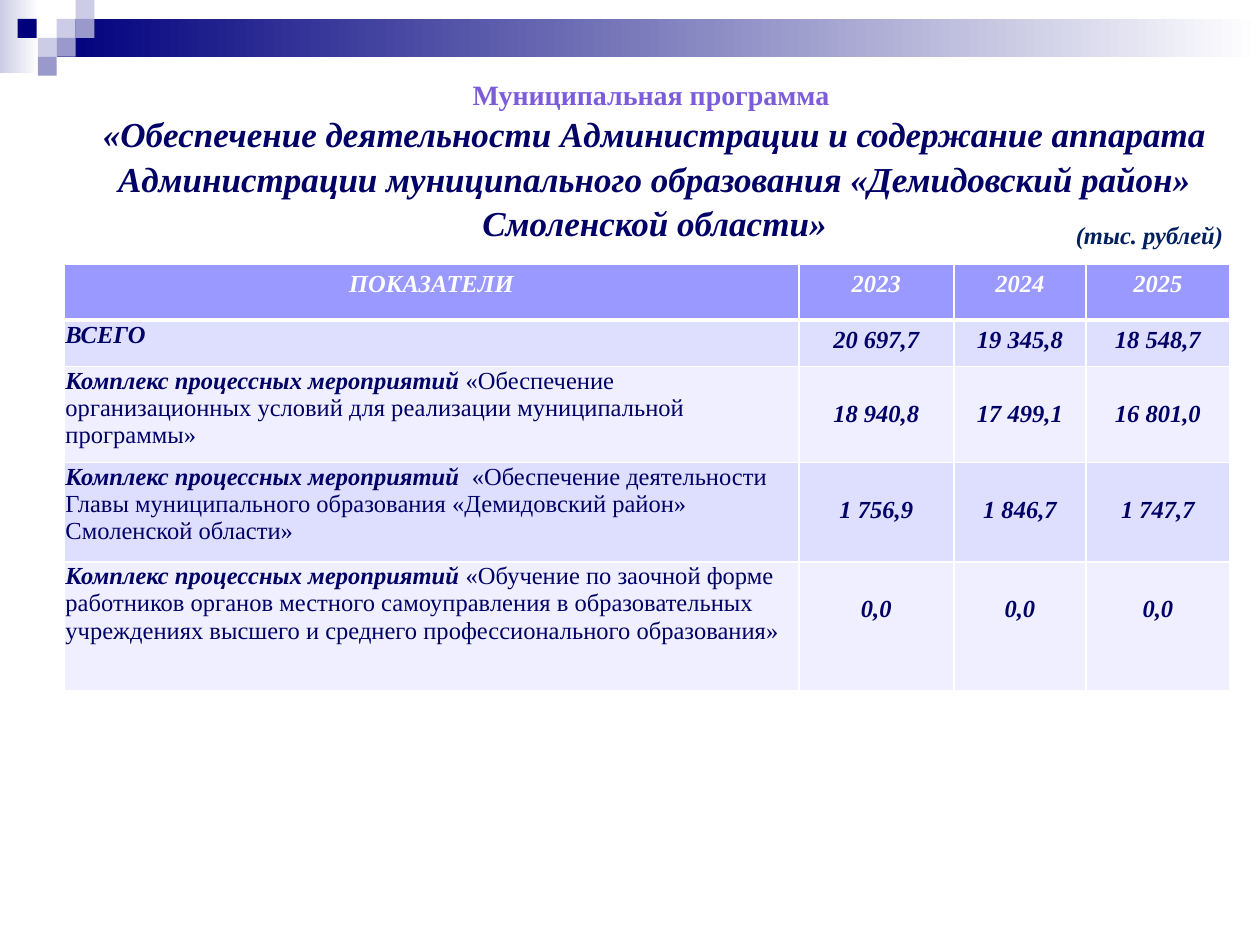
from pptx import Presentation
from pptx import util as u
from pptx.dml.color import RGBColor
from pptx.enum import shapes, text
from pptx.oxml.ns import qn
from lxml import etree

FONT = "Times New Roman"
NAVY = RGBColor(0x00, 0x00, 0x7D)
INK = RGBColor(0x00, 0x00, 0x66)
UNIT_BLUE = RGBColor(0x00, 0x20, 0x60)
VIOLET = RGBColor(0x7D, 0x5C, 0xDA)
PALE = RGBColor(0xCC, 0xCC, 0xE6)
MID = RGBColor(0x99, 0x99, 0xCC)
HEADER = RGBColor(0x99, 0x99, 0xFF)
BANDS = [RGBColor(0xEF, 0xEF, 0xFF), RGBColor(0xDE, 0xDE, 0xFF)]
WHITE = RGBColor(0xFF, 0xFF, 0xFF)

GRADIENT_BARS = [((0, 0, 0.31, 0.58), PALE), ((0.45, 0.15, 9.55, 0.3), NAVY)]
SQUARE = 0.15
SQUARES = [
    (0.45, 0.15, PALE), (0.6, 0, PALE), (0.6, 0.15, MID), (0.3, 0.3, PALE),
    (0.14, 0.15, NAVY), (0.45, 0.3, MID), (0.3, 0.45, MID),
]

TITLE = [
    ("Муниципальная программа ", {"size": u.Pt(16), "bold": True}, VIOLET),
    ("«Обеспечение деятельности Администрации и содержание аппарата "
     "Администрации муниципального образования «Демидовский район» "
     "Смоленской области»", {"size": u.Pt(20), "bold": True, "italic": True}, INK),
]
STRONG = {"size": u.Pt(14), "bold": True, "italic": True}
PLAIN = {"size": u.Pt(14), "bold": False, "italic": False}

COMPLEX = "Комплекс процессных мероприятий "
COLUMNS = [5.83, 1.23, 1.05, 1.14]
ROWS = [
    (0.44, "ПОКАЗАТЕЛИ", "", ["2023", "2024", "2025"]),
    (0.37, "ВСЕГО", "", ["20 697,7", "19 345,8", "18 548,7"]),
    (0.76, COMPLEX, "«Обеспечение организационных условий для реализации "
     "муниципальной программы»", ["18 940,8", "17 499,1", "16 801,0"]),
    (0.79, COMPLEX, " «Обеспечение деятельности Главы муниципального образования "
     "«Демидовский район» Смоленской области»", ["1 756,9", "1 846,7", "1 747,7"]),
    (1.02, COMPLEX, "«Обучение по заочной форме работников органов местного "
     "самоуправления в образовательных учреждениях высшего и среднего "
     "профессионального образования»", ["0,0", "0,0", "0,0"]),
]
LABEL_MARGINS = {"margin_left": 0.01, "margin_top": 0.01, "margin_right": 0.01, "margin_bottom": 0}


def add_span(para, words, formats, color):
    span = para.add_run()
    span.text = words
    span.font.name = FONT
    for name, value in formats.items():
        setattr(span.font, name, value)
    span.font.color.rgb = color


def add_block(page, left, top, width, height):
    block = page.shapes.add_shape(
        shapes.MSO_SHAPE.RECTANGLE, *map(u.Inches, (left, top, width, height)))
    block.shadow.inherit = False
    block.line.fill.background()
    return block


def add_decoration(page):
    for place, start in GRADIENT_BARS:
        fill = add_block(page, *place).fill
        fill.gradient()
        fill.gradient_angle = 0
        for stop, color in zip(fill.gradient_stops, (start, WHITE)):
            stop.color.rgb = color
    for left, top, color in SQUARES:
        fill = add_block(page, left, top, SQUARE, SQUARE).fill
        fill.solid()
        fill.fore_color.rgb = color


def place_title(page):
    title = page.shapes.title
    title.element.getparent().append(title.element)
    title.left, title.top, title.width, title.height = map(u.Inches, (0.35, 0.55, 9.69, 1.38))
    frame = title.text_frame
    frame.auto_size = text.MSO_AUTO_SIZE.NONE
    frame.vertical_anchor = text.MSO_ANCHOR.TOP
    for index, (words, formats, color) in enumerate(TITLE):
        para = frame.add_paragraph() if index else frame.paragraphs[0]
        para.alignment = text.PP_ALIGN.CENTER
        para.line_spacing = 1.05
        add_span(para, words, formats, color)


def set_borders(cell, widths):
    properties = cell._tc.get_or_add_tcPr()
    for side, width in widths.items():
        line = etree.SubElement(properties, qn("a:ln" + side), w=str(u.Pt(width)))
        fill = etree.SubElement(line, qn("a:solidFill"))
        etree.SubElement(fill, qn("a:srgbClr"), val=str(WHITE))


def add_budget_table(page):
    height = sum(row[0] for row in ROWS)
    table = page.shapes.add_table(
        len(ROWS), len(COLUMNS),
        *map(u.Inches, (0.51, 2.1, sum(COLUMNS), height))).table
    for column, width in zip(table.columns, COLUMNS):
        column.width = u.Inches(width)
    for r, (row_height, label, detail, values) in enumerate(ROWS):
        table.rows[r].height = u.Inches(row_height)
        for c, words in enumerate([label] + values):
            cell = table.cell(r, c)
            set_borders(cell, {"L": 1, "R": 1, "T": 3 if r == 1 else 1, "B": 1 if r else 3})
            cell.fill.solid()
            cell.fill.fore_color.rgb = BANDS[r % 2] if r else HEADER
            para = cell.text_frame.paragraphs[0]
            add_span(para, words, STRONG, INK if r else WHITE)
            if r and c == 0:
                for name, value in LABEL_MARGINS.items():
                    setattr(cell, name, u.Inches(value))
                if detail:
                    add_span(para, detail, PLAIN, INK)
            else:
                para.alignment = text.PP_ALIGN.CENTER
                cell.margin_top = u.Inches(0.27 if detail else 0.05)


def add_unit_note(page):
    box = page.shapes.add_textbox(*map(u.Inches, (8.44, 1.7, 1.44, 0.34)))
    box.text_frame.word_wrap = True
    add_span(box.text_frame.paragraphs[0], "(тыс. рублей)", STRONG, UNIT_BLUE)


def main():
    deck = Presentation()
    deck.slide_width, deck.slide_height = u.Inches(10), u.Inches(7.5)
    page = deck.slides.add_slide(deck.slide_layouts[5])
    add_decoration(page)
    place_title(page)
    add_budget_table(page)
    add_unit_note(page)
    deck.save("out.pptx")


if __name__ == "__main__":
    main()
